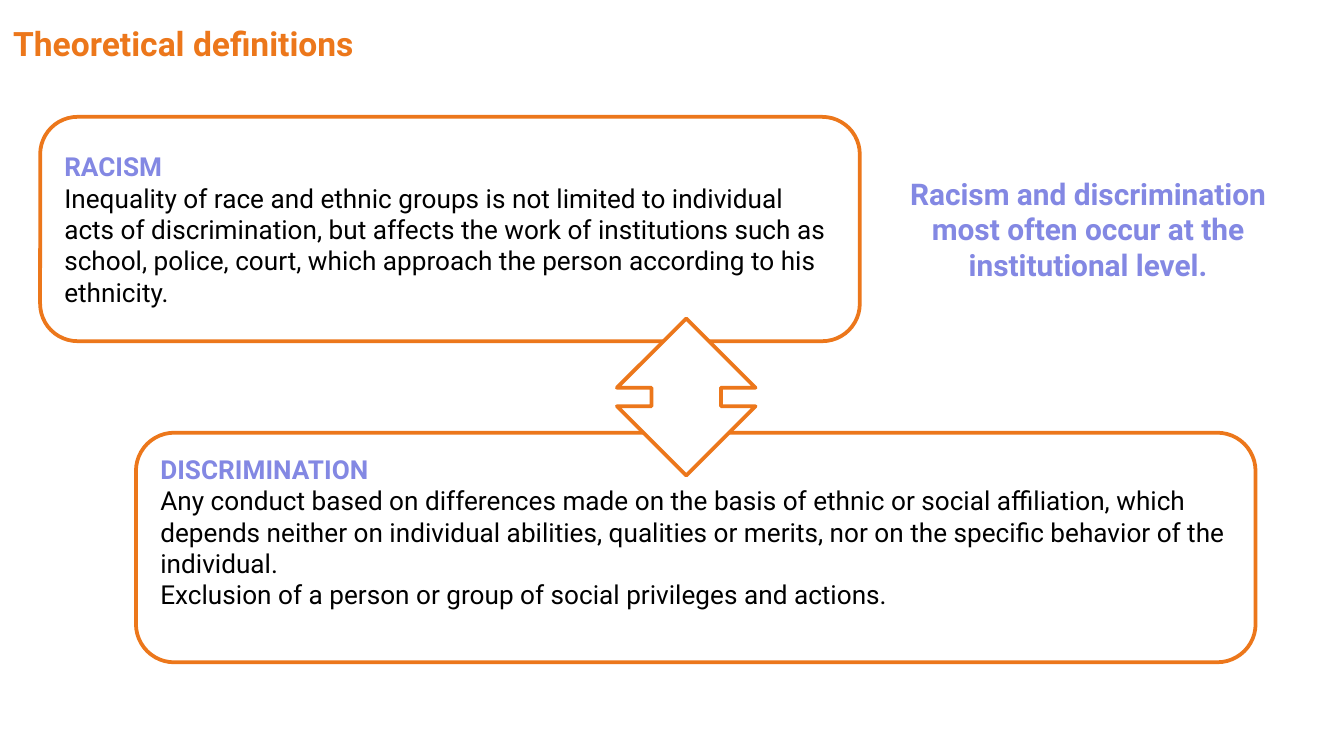
import pptx
import pptx.dml.color
import pptx.enum.shapes
import pptx.enum.text
import pptx.util
from lxml import etree

Cm, Pt = pptx.util.Cm, pptx.util.Pt
SHAPE = pptx.enum.shapes.MSO_SHAPE
ALIGN = pptx.enum.text.PP_ALIGN

THEME = {
    "font": "Roboto",
    "orange": "EC771B", "violet": "8388E3", "black": "000000", "white": "FFFFFF",
    "title": 18, "callout": 16, "body": 14, "outline": 2,
}

# Boxes are left, top, width, height in centimetres.
HEADINGS = [
    {"box": (0, 0.15, 25.4, 1.32), "size": "title", "color": "orange",
     "align": ALIGN.JUSTIFY, "text": "Theoretical definitions"},
    {"box": (16.26, 2.21, 8.61, 4.24), "size": "callout", "color": "violet",
     "align": ALIGN.CENTER,
     "text": "Racism and discrimination most often occur at the institutional level."},
]
DEFINITIONS = [
    {"box": (0.76, 2.21, 15.49, 4.24), "bottom": 0.13, "term": "RACISM", "text": [
        "Inequality of race and ethnic groups is not limited to individual acts of "
        "discrimination, but affects the work of institutions such as school, police, "
        "court, which approach the person according to his ethnicity."]},
    {"box": (2.57, 8.18, 21.16, 4.34), "bottom": 0.73, "term": "DISCRIMINATION", "text": [
        "Any conduct based on differences made on the basis of ethnic or social "
        "affiliation, which depends neither on individual abilities, qualities or merits, "
        "nor on the specific behavior of the individual.",
        "Exclusion of a person or group of social privileges and actions."]},
]
ARROW_BOX = (11.66, 6.02, 2.62, 2.97)


def color(name):
    return pptx.dml.color.RGBColor.from_string(THEME[name])


def write(tf, paragraphs, size, align, bottom=0.13):
    """Fill a text frame with (text, color, bold) paragraphs."""
    tf.word_wrap = True
    tf.vertical_anchor = pptx.enum.text.MSO_ANCHOR.MIDDLE
    tf.margin_left = tf.margin_right = Cm(0.25)
    tf.margin_top, tf.margin_bottom = Cm(0.13), Cm(bottom)
    for i, (text, tone, bold) in enumerate(paragraphs):
        p = tf.add_paragraph() if i else tf.paragraphs[0]
        p.alignment = align
        r = p.add_run()
        r.text = text
        r.font.name, r.font.size, r.font.bold = THEME["font"], Pt(THEME[size]), bold
        r.font.color.rgb = color(tone)


def add_outlined(s, kind, box):
    sp = s.shapes.add_shape(kind, *map(Cm, box))
    sp.shadow.inherit = False
    sp.fill.solid()
    sp.fill.fore_color.rgb = color("white")
    sp.line.color.rgb = color("orange")
    sp.line.width = Pt(THEME["outline"])
    etree.SubElement(sp.line.fill._xPr, pptx.oxml.ns.qn("a:round"))
    return sp


def main():
    prs = pptx.Presentation()
    prs.slide_width, prs.slide_height = Cm(25.4), Cm(14.29)
    s = prs.slides.add_slide(prs.slide_layouts[6])
    for h in HEADINGS:
        tf = s.shapes.add_textbox(*map(Cm, h["box"])).text_frame
        write(tf, [(h["text"], h["color"], True)], h["size"], h["align"])
    for d in DEFINITIONS:
        sp = add_outlined(s, SHAPE.ROUNDED_RECTANGLE, d["box"])
        paragraphs = [(d["term"], "violet", True)]
        paragraphs += [(text, "black", False) for text in d["text"]]
        write(sp.text_frame, paragraphs, "body", ALIGN.LEFT, d["bottom"])
    add_outlined(s, SHAPE.UP_DOWN_ARROW, ARROW_BOX)
    prs.save("out.pptx")


if __name__ == "__main__":
    main()
